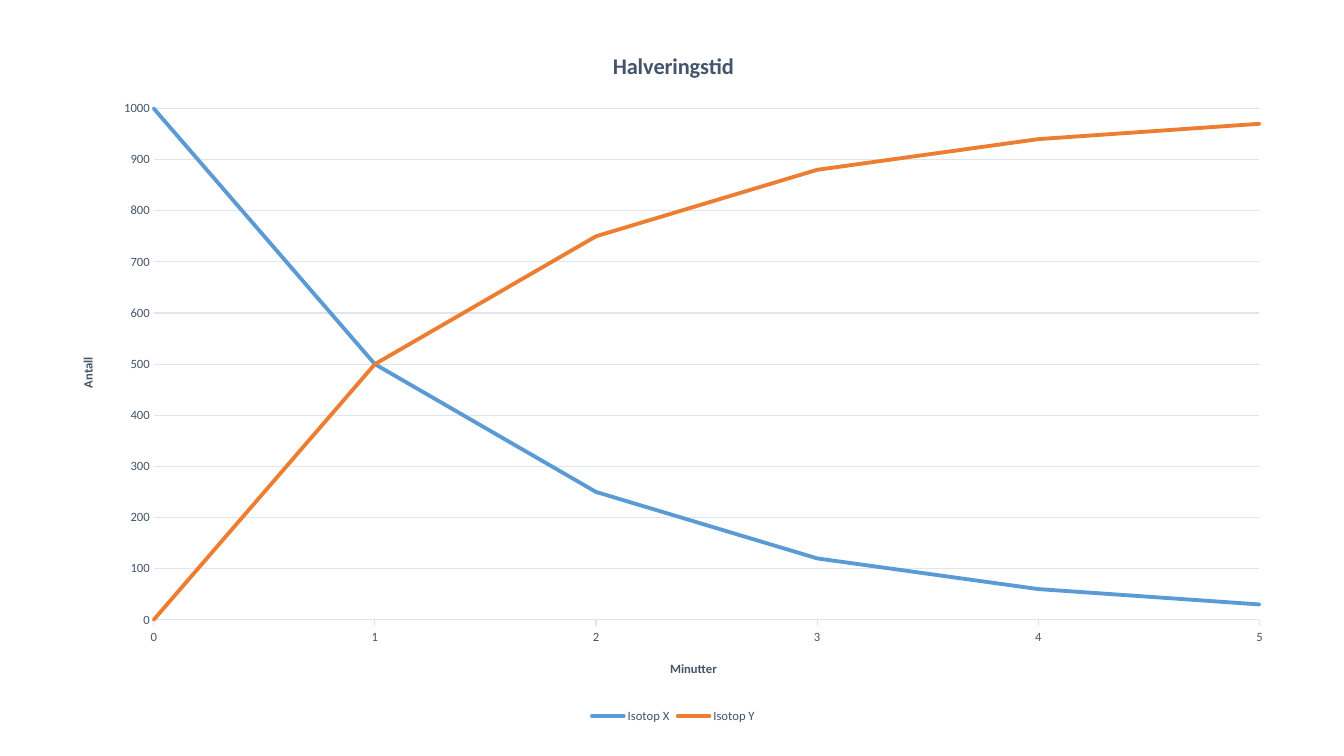
from lxml import etree
from pptx import Presentation
from pptx.chart.data import CategoryChartData
from pptx.dml.color import RGBColor
from pptx.enum.chart import XL_CHART_TYPE, XL_LEGEND_POSITION, XL_MARKER_STYLE, XL_TICK_MARK
from pptx.oxml.ns import qn
from pptx.util import Cm, Pt

LINE = XL_CHART_TYPE.LINE
BOTTOM = XL_LEGEND_POSITION.BOTTOM
NO_MARK = XL_MARKER_STYLE.NONE
OUT, NO_TICK = XL_TICK_MARK.OUTSIDE, XL_TICK_MARK.NONE

SLATE = RGBColor(0x44, 0x54, 0x6A)
PALE = RGBColor(0xE0, 0xE5, 0xEB)
BLUE = RGBColor(0x5B, 0x9B, 0xD5)
ORANGE = RGBColor(0xED, 0x7D, 0x31)
FONT = "Calibri"

MINUTES = ["0", "1", "2", "3", "4", "5"]
DECAY = [
    ("Isotop X", [1000, 500, 250, 120, 60, 30], BLUE),
    ("Isotop Y", [0, 500, 750, 880, 940, 970], ORANGE),
]


def style(font, size=9, bold=False, color=SLATE):
    font.name, font.size, font.bold = FONT, Pt(size), bold
    font.color.rgb = color


def write(frame, text, **form):
    run = frame.paragraphs[0].add_run()
    run.text = text
    style(run.font, **form)


def stroke(line, color, width):
    line.color.rgb = color
    line.width = Pt(width)


def dress_axis(axis, title, tick):
    write(axis.axis_title.text_frame, title, bold=True)
    style(axis.tick_labels.font)
    axis.major_tick_mark = tick
    axis.minor_tick_mark = NO_TICK


def start_on_axis(chart):
    """Put the first and last points on the edges of the plot."""
    scale = chart.element.find(".//" + qn("c:valAx"))
    for old in scale.findall(qn("c:crossBetween")):
        scale.remove(old)
    cross = etree.Element(qn("c:crossBetween"), val="midCat")
    scale.find(qn("c:crosses")).addnext(cross)


def draw_chart(slide, left, top, width, height):
    data = CategoryChartData()
    data.categories = MINUTES
    for name, counts, _ in DECAY:
        data.add_series(name, counts)
    chart = slide.shapes.add_chart(LINE, left, top, width, height, data).chart
    style(chart.font, size=10)

    # Title and legend
    chart.has_title = True
    write(chart.chart_title.text_frame, "Halveringstid", size=16, bold=True)
    chart.chart_title.include_in_layout = False
    chart.has_legend = True
    chart.legend.position = BOTTOM
    chart.legend.include_in_layout = False
    style(chart.legend.font)

    # Minutes axis
    minutes = chart.category_axis
    dress_axis(minutes, "Minutter", OUT)
    stroke(minutes.format.line, PALE, 0.75)

    # Count axis
    count = chart.value_axis
    dress_axis(count, "Antall", NO_TICK)
    count.minimum_scale, count.maximum_scale = 0, 1000
    count.major_unit = 100
    count.format.line.fill.background()
    stroke(count.major_gridlines.format.line, PALE, 0.75)
    start_on_axis(chart)

    # Curves with round ends
    plot = chart.plots[0]
    plot.vary_by_categories = False
    for curve, (_, _, color) in zip(plot.series, DECAY):
        curve.smooth = False
        curve.marker.style = NO_MARK
        stroke(curve.format.line, color, 2.75)
        edge = curve.format.line._ln
        edge.set("cap", "rnd")
        etree.SubElement(edge, qn("a:round"))


def main():
    deck = Presentation()
    deck.slide_width, deck.slide_height = Cm(33.87), Cm(19.05)
    slide = deck.slides.add_slide(deck.slide_layouts[6])
    draw_chart(slide, Cm(1.5), Cm(0.68), Cm(30.94), Cm(17.65))
    deck.save("out.pptx")


if __name__ == "__main__":
    main()
